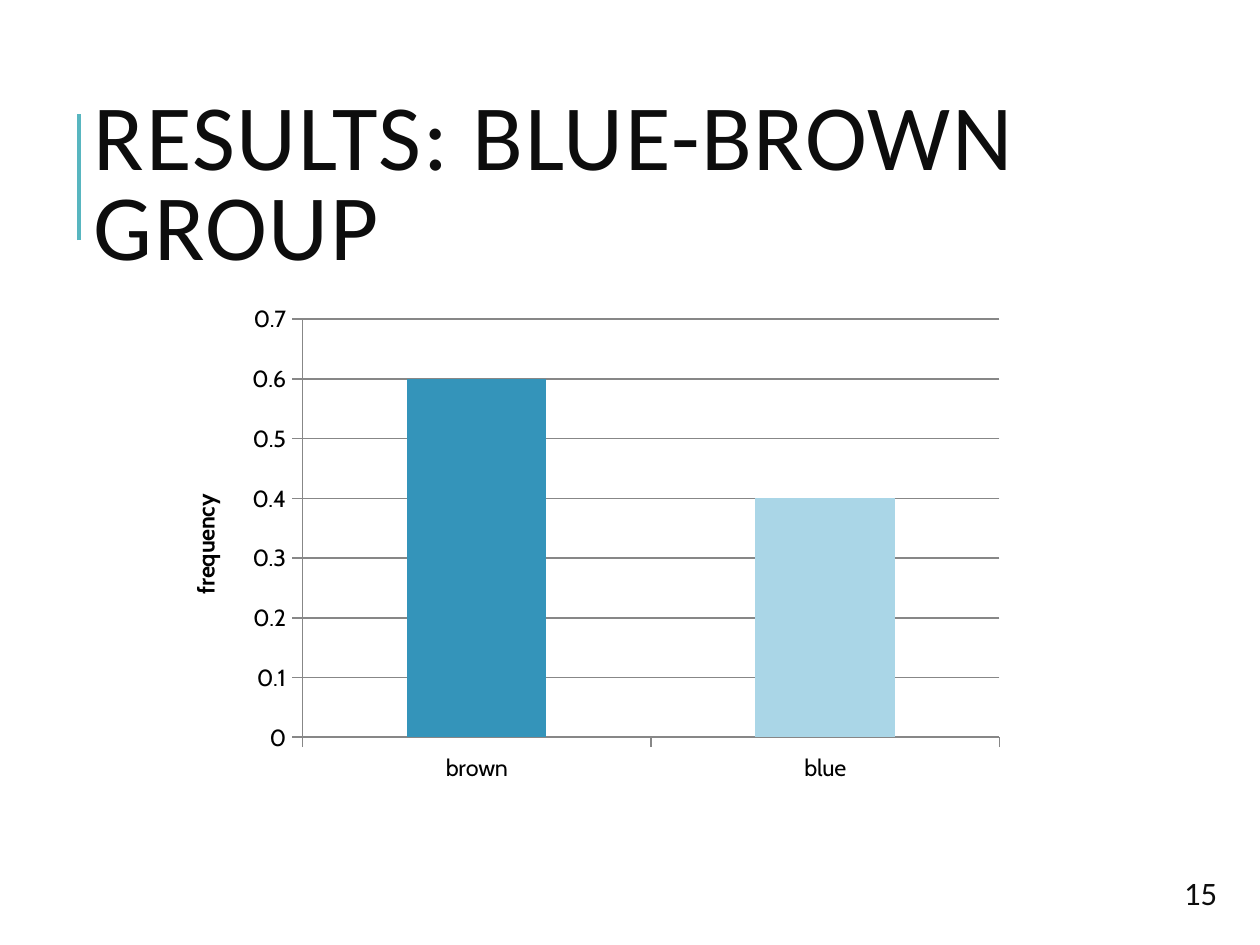
from lxml import etree
from pptx import Presentation
from pptx import util as u
from pptx.chart.data import CategoryChartData
from pptx.dml.color import RGBColor
from pptx.enum import chart as ch, shapes, text
from pptx.oxml import parse_xml
from pptx.oxml.ns import nsdecls, qn

INK = RGBColor(0x0D, 0x0D, 0x0D)
BLACK = RGBColor(0, 0, 0)
TEAL = RGBColor(0x58, 0xB6, 0xC0)
GREY = RGBColor(0x87, 0x87, 0x87)
BROWN_BAR = RGBColor(0x34, 0x94, 0xBA)
BLUE_BAR = RGBColor(0xAA, 0xD6, 0xE7)


class Deck:
    """Slide style and builders; lengths are columns and rows of a grid."""

    CELL = u.Inches(0.1)
    COLS, ROWS = 75, 56.25
    TEXT_FONT, CHART_FONT = "Calibri", "Cabin"

    def __init__(self):
        self.prs = Presentation()
        self.prs.slide_width, self.prs.slide_height = self.grid(self.COLS, self.ROWS)
        self.s = self.prs.slides.add_slide(self.prs.slide_layouts[6])

    def grid(self, *cells):
        return [u.Emu(round(c * self.CELL)) for c in cells]

    def rule(self, x1, y1, x2, y2, color, width):
        sp = self.s.shapes.add_connector(
            shapes.MSO_CONNECTOR.STRAIGHT, *self.grid(x1, y1, x2, y2))
        sp.line.color.rgb = color
        sp.line.width = u.Pt(width)
        etree.SubElement(sp._element.spPr, qn("a:effectLst"))

    def label(self, box, words, size, anchor, spacing=1.0, tracking=0):
        tf = self.s.shapes.add_textbox(*self.grid(*box)).text_frame
        tf.word_wrap = True
        tf.vertical_anchor = anchor
        tf.margin_left = tf.margin_right = self.CELL
        tf.margin_top = tf.margin_bottom = self.CELL
        p = tf.paragraphs[0]
        p.line_spacing = spacing
        r = p.add_run()
        r.text = words
        r.font.size, r.font.name = u.Pt(size), self.TEXT_FONT
        r.font.color.rgb = INK
        if tracking:
            r._r.get_or_add_rPr().set("spc", str(tracking))

    @staticmethod
    def place(element, x, y, w=None, h=None):
        """Fix the layout of a chart part as shares of the chart's size."""
        for old in element.findall(qn("c:layout")):
            element.remove(old)
        inner = '<c:layoutTarget val="inner"/>' if w else ""
        parts = [("xMode", "edge"), ("yMode", "edge"), ("x", x), ("y", y)]
        if w:
            parts += [("w", w), ("h", h)]
        body = inner + "".join(f'<c:{k} val="{v}"/>' for k, v in parts)
        layout = parse_xml(f'<c:layout {nsdecls("c")}><c:manualLayout>{body}'
                           "</c:manualLayout></c:layout>")
        tx = element.find(qn("c:tx"))
        element.insert(0 if tx is None else 1, layout)

    def columns(self, box, values, colors, axis_title):
        data = CategoryChartData()
        data.categories = list(values)
        data.add_series("Series 1", list(values.values()))
        chart = self.s.shapes.add_chart(
            ch.XL_CHART_TYPE.COLUMN_CLUSTERED, *self.grid(*box), data).chart
        chart.has_legend = chart.has_title = False
        chart.font.size, chart.font.name = u.Pt(10), self.CHART_FONT
        chart.font.color.rgb = BLACK

        # Bars
        plot = chart.plots[0]
        plot.gap_width = 150
        plot.vary_by_categories = False
        for i, color in enumerate(colors):
            fill = plot.series[0].points[i].format.fill
            fill.solid()
            fill.fore_color.rgb = color

        # Axes and gridlines
        axis = chart.value_axis
        axis.minimum_scale, axis.maximum_scale, axis.major_unit = 0, 0.7, 0.1
        axis.has_major_gridlines = True
        for part in (axis, chart.category_axis, axis.major_gridlines):
            part.format.line.color.rgb = GREY
            part.format.line.width = u.Pt(0.75)
        for part in (axis, chart.category_axis):
            part.major_tick_mark = ch.XL_TICK_MARK.OUTSIDE

        # Axis title
        r = axis.axis_title.text_frame.paragraphs[0].add_run()
        r.text = axis_title
        r.font.size, r.font.name, r.font.bold = u.Pt(10), self.CHART_FONT, True
        r.font.color.rgb = BLACK
        axis.axis_title.text_frame._txBody.bodyPr.set("rot", "-5400000")

        self.place(axis.axis_title._element, 0.02, 0.37)
        self.place(chart._chartSpace.chart.plotArea, 0.16, 0.03, 0.83, 0.83)


def main():
    deck = Deck()

    # Heading with its accent rule
    deck.rule(4.7, 14.3, 4.7, 6.8, TEAL, 1.5)
    deck.label((4.6, 4.9, 67.8, 6.3), "RESULTS: BLUE-BROWN GROUP", 40,
               text.MSO_ANCHOR.TOP, spacing=0.8, tracking=75)

    # Page number
    deck.label((69.5, 51, 4.5, 4.3), "15", 14, text.MSO_ANCHOR.MIDDLE)

    # Frequency chart
    deck.columns((10, 18.1, 50, 30), {"brown": 0.6, "blue": 0.4},
                 (BROWN_BAR, BLUE_BAR), "frequency")

    deck.prs.save("out.pptx")


if __name__ == "__main__":
    main()
